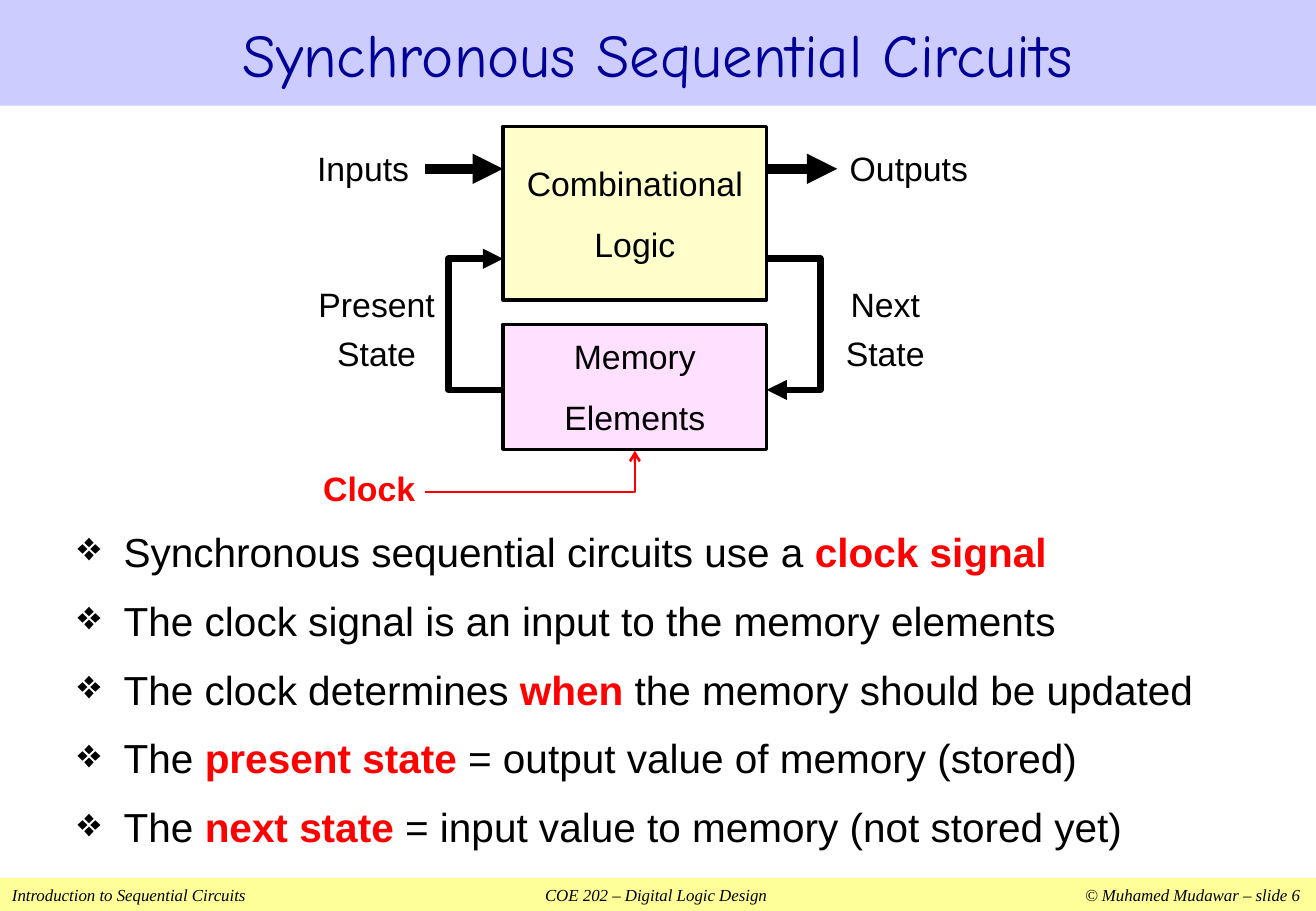
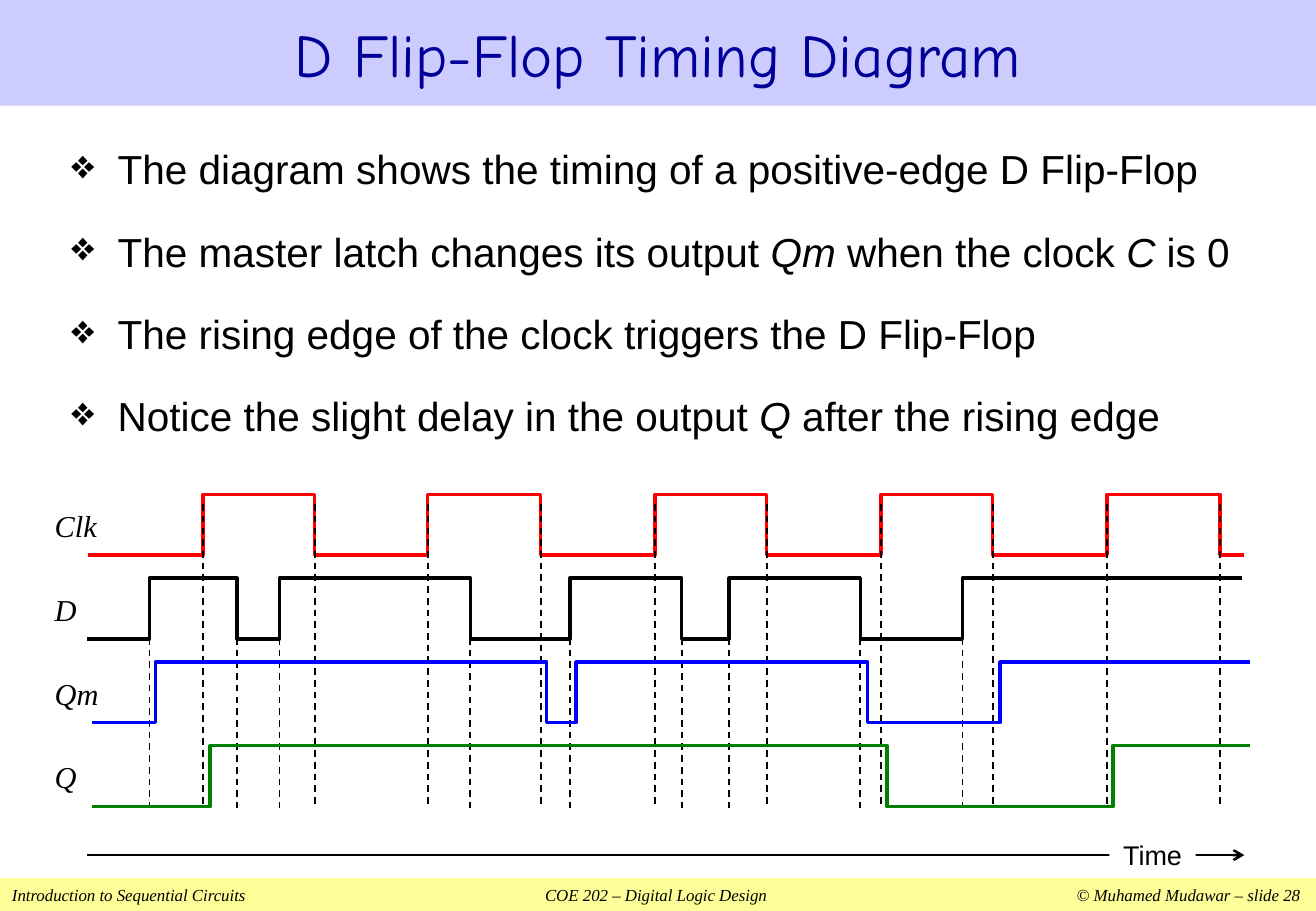
from pptx import Presentation
from pptx.dml.color import RGBColor
from pptx.enum.dml import MSO_LINE
from pptx.enum.shapes import MSO_CONNECTOR, MSO_SHAPE
from pptx.enum.text import MSO_ANCHOR, PP_ALIGN
from pptx.oxml.ns import qn
from pptx.util import Inches, Pt
from lxml.etree import SubElement

WIDTH, HEIGHT = 10.83, 7.5
SANS, SERIF, TITLE = "Arial", "Times New Roman", "Comic Neue"
LEFT, MID = PP_ALIGN.LEFT, PP_ALIGN.CENTER
HUES = {
    "black": "000000", "white": "FFFFFF", "red": "FF0000", "blue": "0000FF",
    "green": "008000", "navy": "000099", "band": "CCCCFF", "foot": "FFFF99",
    "cream": "FFFFCC", "pink": "FFE1FF",
}


def hue(name):
    return RGBColor.from_string(HUES[name])


def add_run(para, text, size, font=SANS, color="black", bold=False, italic=False):
    run = para.add_run()
    run.text = text
    run.font.size = Pt(size)
    run.font.name = font
    run.font.bold = bold
    run.font.italic = italic
    run.font.color.rgb = hue(color)


def set_text(shape, lines, size, align=MID, inset=0, spaces=(), wrap=True, **style):
    """Fill a shape with one paragraph a line; spaces holds their line spacing."""
    frame = shape.text_frame
    frame.word_wrap = wrap
    frame.vertical_anchor = MSO_ANCHOR.MIDDLE
    frame.margin_left = frame.margin_right = Inches(inset)
    frame.margin_top = frame.margin_bottom = Inches(inset / 2)
    for i, line in enumerate(lines):
        para = frame.add_paragraph() if i else frame.paragraphs[0]
        para.alignment = align
        if spaces:
            para.line_spacing = spaces[i]
        add_run(para, line, size, **style)


def add_box(slide, at, fill, line=None):
    box = slide.shapes.add_shape(MSO_SHAPE.RECTANGLE, *map(Inches, at))
    box.shadow.inherit = False
    box.fill.solid()
    box.fill.fore_color.rgb = hue(fill)
    if line:
        box.line.color.rgb = hue("black")
        box.line.width = Pt(line)
    else:
        box.line.fill.background()
    return box


def add_label(slide, at, lines, size=20, **style):
    box = slide.shapes.add_textbox(*map(Inches, at))
    set_text(box, lines, size, **style)


def style_line(shape, color, width, dash=False, head=None, tail=None):
    line = shape.line
    line.color.rgb = hue(color)
    line.width = Pt(width)
    if dash:
        line.dash_style = MSO_LINE.DASH
    node = shape._element.spPr.find(qn("a:ln"))
    for tag, kind in (("a:headEnd", head), ("a:tailEnd", tail)):
        if kind:
            SubElement(node, qn(tag), type=kind)


def add_line(slide, start, end, width, **style):
    link = slide.shapes.add_connector(
        MSO_CONNECTOR.STRAIGHT, *map(Inches, start + end))
    style_line(link, "black", width, **style)
    SubElement(link._element.spPr, qn("a:effectLst"))


def add_path(slide, points, color, width, **style):
    """Draw an open line through the points."""
    first, *rest = [(Inches(x), Inches(y)) for x, y in points]
    pen = slide.shapes.build_freeform(*first)
    pen.add_line_segments(rest, close=False)
    shape = pen.convert_to_shape()
    shape.shadow.inherit = False
    shape.fill.background()
    style_line(shape, color, width, **style)


def add_wave(slide, start, end, top, edges, color):
    """Draw a signal that starts low and toggles at each edge."""
    levels = (top + 0.5, top)
    points = [(start, levels[0])]
    for i, x in enumerate(edges):
        points += [(x, levels[i % 2]), (x, levels[(i + 1) % 2])]
    points.append((end, levels[len(edges) % 2]))
    add_path(slide, points, color, 2)


def add_list(slide, at, items, gap):
    """Add bullets; each item is a list of (text, style) runs."""
    frame = slide.shapes.add_textbox(*map(Inches, at)).text_frame
    frame.word_wrap = True
    for i, runs in enumerate(items):
        para = frame.add_paragraph() if i else frame.paragraphs[0]
        para.space_before = Pt(gap)
        props = para._p.get_or_add_pPr()
        props.set("marL", str(Inches(0.38)))
        props.set("indent", str(Inches(-0.38)))
        SubElement(props, qn("a:buChar"), char="❖")
        for text, style in runs:
            add_run(para, text, 24, **style)


def add_slide(deck, title, number):
    """Add a slide with its title band and footer."""
    slide = deck.slides.add_slide(deck.slide_layouts[6])
    foot = add_box(slide, (0, 7.23, WIDTH, 0.27), "foot")
    text = ("Introduction to Sequential Circuits\tCOE 202 – Digital Logic Design"
            f"\t© Muhamed Mudawar – slide {number}")
    set_text(foot, [text], 10, LEFT, 0.1, font=SERIF, italic=True)
    props = foot.text_frame.paragraphs[0]._p.get_or_add_pPr()
    tabs = SubElement(props, qn("a:tabLst"))
    for pos, align in ((5.3, "ctr"), (10.6, "r")):
        SubElement(tabs, qn("a:tab"), pos=str(Inches(pos)), algn=align)
    band = add_box(slide, (0, 0, WIDTH, 0.87), "band")
    set_text(band, [title], 36, inset=0.1, font=TITLE, color="navy")
    return slide


def draw_circuit(deck):
    slide = add_slide(deck, "Synchronous Sequential Circuits", 6)
    plain, key = {}, {"color": "red", "bold": True}
    add_list(slide, (0.54, 4.29, 9.8, 2.9), [
        [("Synchronous sequential circuits use a ", plain), ("clock signal", key)],
        [("The clock signal is an input to the memory elements", plain)],
        [("The clock determines ", plain), ("when ", key),
         ("the memory should be updated", plain)],
        [("The ", plain), ("present state ", key),
         ("= output value of memory (stored)", plain)],
        [("The ", plain), ("next state ", key),
         ("= input value to memory (not stored yet)", plain)],
    ], 12)

    left, wide = 4.14, 2.17
    right, center = left + wide, left + wide / 2
    upper, lower = 2.13, 3.21
    add_path(slide, [(3.5, 4.05), (center, 4.05), (center, 3.71)],
             "red", 1.5, tail="arrow")
    add_path(slide, [(right, lower), (6.75, lower), (6.75, upper), (right, upper)],
             "black", 4, head="triangle")
    for top, high, fill, lines in (
            (1.04, 1.43, "cream", ["Combinational", "Logic"]),
            (2.67, 1.03, "pink", ["Memory", "Elements"])):
        box = add_box(slide, (left, top, wide, high), fill, 2)
        set_text(box, lines, 20, spaces=(1, 1.5))
    for start, end in ((3.5, left), (right, 6.89)):
        add_line(slide, (start, 1.39), (end, 1.39), 6, tail="triangle")
    add_path(slide, [(left, lower), (3.69, lower), (3.69, upper), (left, upper)],
             "black", 4, tail="triangle")

    add_label(slide, (2.66, 3.84, 0.84, 0.35), ["Clock"], align=LEFT, **key)
    add_label(slide, (2.61, 1.14, 0.84, 0.49), ["Inputs"], align=LEFT)
    add_label(slide, (6.99, 1.14, 0.98, 0.49), ["Outputs"])
    for x, width, word in ((6.89, 0.79, "Next"), (2.61, 0.98, "Present")):
        add_label(slide, (x, 2.27, width, 0.8), [word, "State"], spaces=(1.2, 1.2))


def draw_timing(deck):
    slide = add_slide(deck, "D Flip-Flop Timing Diagram", 28)
    plain, name = {}, {"italic": True}
    add_list(slide, (0.49, 1.14, 9.94, 2.66), [
        [("The diagram shows the timing of a positive-edge D Flip-Flop", plain)],
        [("The master latch changes its output ", plain), ("Qm", name),
         (" when the clock ", plain), ("C", name), (" is 0", plain)],
        [("The rising edge of the clock triggers the D Flip-Flop", plain)],
        [("Notice the slight delay in the output ", plain), ("Q", name),
         (" after the rising edge", plain)],
    ], 20)

    clock = [1.67, 2.59, 3.52, 4.45, 5.39, 6.31, 7.25, 8.17, 9.11, 10.04]
    data = [1.23, 1.95, 2.3, 3.87, 4.69, 5.61, 6, 7.08, 7.92]
    master = [1.28, 4.5, 4.74, 7.14, 8.23]
    output = [1.73, 7.3, 9.16]
    signals = [
        ("Clk", 0.72, 10.24, clock, "red"),
        ("D", 0.72, 10.22, data, "black"),
        ("Qm", 0.76, 10.29, master, "blue"),
        ("Q", 0.76, 10.29, output, "green"),
    ]

    def draw_rows(first, last):
        for row in range(first, last):
            label, start, end, edges, color = signals[row]
            top = 4.07 + 0.69 * row
            add_wave(slide, start, end, top, edges, color)
            add_label(slide, (0.45, top + 0.08, 0.45, 0.35), [label], 18,
                      align=LEFT, font=SERIF, italic=True)

    draw_rows(0, 2)
    for edges, top in ((data, 4.77), (clock, 4.15)):
        for x in edges:
            add_line(slide, (x, top), (x, 6.65), 1, dash=True)
    add_line(slide, (0.72, 7.04), (10.24, 7.04), 1.5, tail="arrow")
    time = add_box(slide, (9.13, 6.88, 0.71, 0.31), "white")
    set_text(time, ["Time"], 16, wrap=False)
    draw_rows(2, 4)


def main():
    deck = Presentation()
    deck.slide_width, deck.slide_height = Inches(WIDTH), Inches(HEIGHT)
    draw_circuit(deck)
    draw_timing(deck)
    deck.save("out.pptx")


if __name__ == "__main__":
    main()
